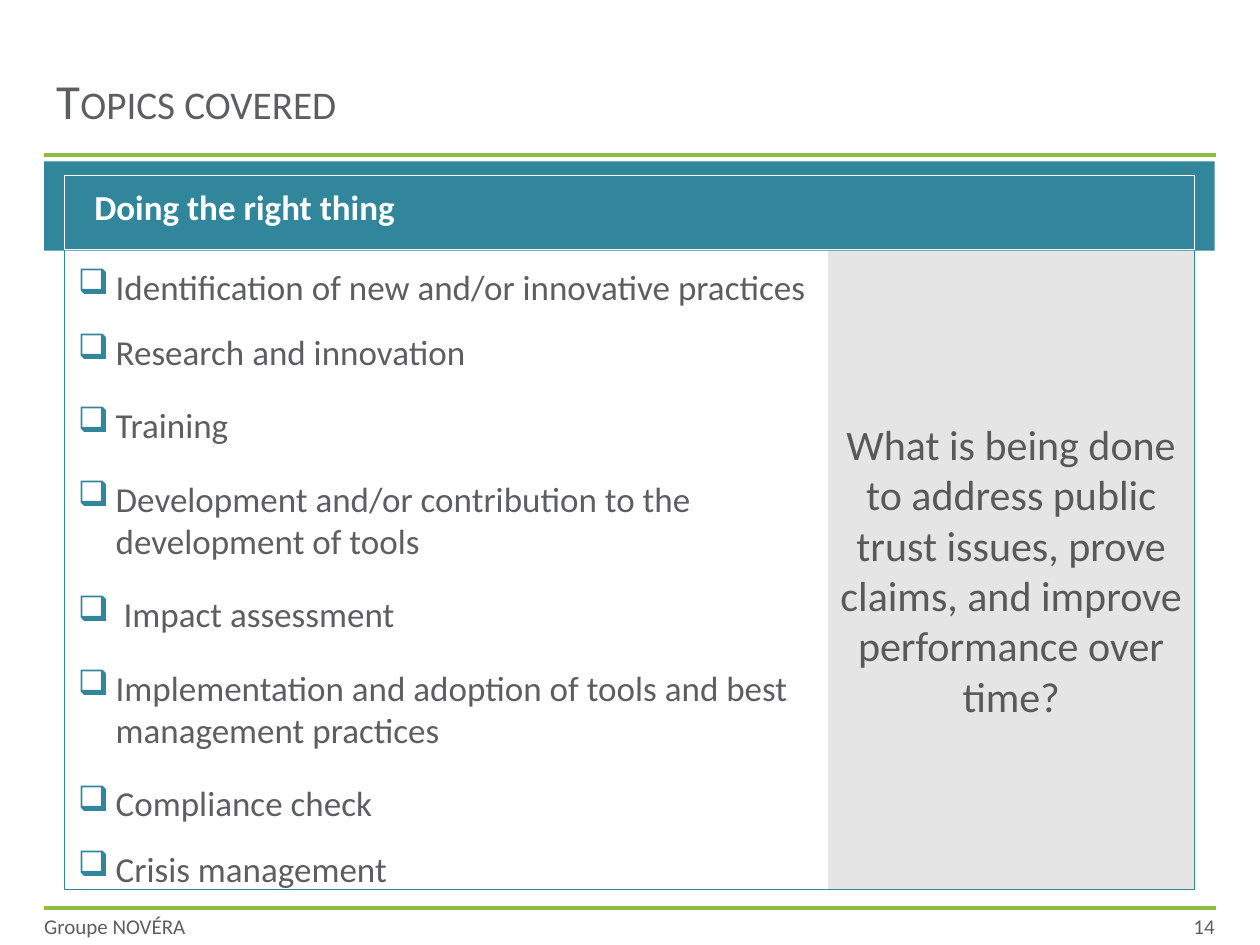
from lxml.etree import SubElement
from pptx import Presentation
from pptx.dml.color import RGBColor
from pptx.enum.shapes import MSO_CONNECTOR as Connector, MSO_SHAPE as Shape
from pptx.enum.text import MSO_ANCHOR as Anchor, PP_ALIGN as Align
from pptx.oxml.ns import qn
from pptx.util import Inches, Pt

GREEN, TEAL, WHITE = "8EBC3F", "31869B", "FFFFFF"
TEXT, DARK, GREY = "5C5E5F", "595959", "D9D9D9"
RULE_LEFT, RULE_RIGHT = 0.35, 9.65
FRAME_LEFT, FRAME_TOP, FRAME_WIDTH = 0.51, 1.39, 8.97
BODY_TOP, FRAME_BOTTOM, FOOTER_TOP = 1.98, 7.06, 7.21
INDENT = 0.3

# Topic and its line spacing
TOPICS = [
    ("Identification of new and/or innovative practices", 0.8),
    ("Research and innovation", 0.8),
    ("Training", 1.0),
    ("Development and/or contribution to the development of tools", 1.0),
    (" Impact assessment", 1.0),
    ("Implementation and adoption of tools and best management practices", 1.0),
    ("Compliance check", 1.0),
    ("Crisis management", 0.8),
]


def colour(value):
    return RGBColor.from_string(value)


def apply(target, values):
    for name, value in values.items():
        setattr(target, name, value)


class SlideBuilder:
    font = "Calibri"

    def __init__(self, page):
        self.page = page

    def rule(self, y):
        line = self.page.shapes.add_connector(
            Connector.STRAIGHT, Inches(RULE_LEFT), Inches(y), Inches(RULE_RIGHT), Inches(y))
        line.line.color.rgb = colour(GREEN)
        line.line.width = Pt(2.25)
        SubElement(line._element.spPr, qn("a:effectLst"))

    def rectangle(self, left, top, width, height, fill=None, line=None, opacity=100):
        box = self.page.shapes.add_shape(
            Shape.RECTANGLE, Inches(left), Inches(top), Inches(width), Inches(height))
        box.shadow.inherit = False
        if fill:
            box.fill.solid()
            box.fill.fore_color.rgb = colour(fill)
            if opacity < 100:
                solid = box._element.spPr.find(qn("a:solidFill"))
                SubElement(solid[0], qn("a:alpha"), val=str(opacity * 1000))
        else:
            box.fill.background()
        if line:
            box.line.color.rgb = colour(line)
            box.line.width = Pt(0.75)
        else:
            box.line.fill.background()
        return box

    def text_box(self, left, top, width, height):
        return self.page.shapes.add_textbox(
            Inches(left), Inches(top), Inches(width), Inches(height))

    def frame(self, box, anchor=Anchor.MIDDLE, margins=(0.1, 0.05, 0.1, 0.05)):
        sides = ("margin_left", "margin_top", "margin_right", "margin_bottom")
        apply(box.text_frame, {"word_wrap": True, "vertical_anchor": anchor,
                               **dict(zip(sides, map(Inches, margins)))})
        return box.text_frame

    def add_text(self, para, text, size, ink=TEXT, bold=False, align=Align.LEFT, **spacing):
        apply(para, {"alignment": align, **spacing})
        span = para.add_run()
        span.text = text
        apply(span.font, {"name": self.font, "size": Pt(size), "bold": bold})
        span.font.color.rgb = colour(ink)
        return span

    def indent(self, para, left, first=0.0):
        props = para._p.get_or_add_pPr()
        props.set("marL", str(Inches(left)))
        props.set("indent", str(Inches(first)))
        return props

    def checklist(self, frame, items):
        for number, (text, spacing) in enumerate(items):
            para = frame.add_paragraph() if number else frame.paragraphs[0]
            self.add_text(para, text, 20, line_spacing=spacing,
                          space_before=Pt(12), space_after=Pt(6))
            props = self.indent(para, INDENT, -INDENT)
            bullet = SubElement(props, qn("a:buClr"))
            SubElement(bullet, qn("a:srgbClr"), val=TEAL)
            SubElement(props, qn("a:buChar"), char="❑")


def main():
    deck = Presentation()
    deck.slide_width, deck.slide_height = Inches(10), Inches(7.5)
    slide = SlideBuilder(deck.slides.add_slide(deck.slide_layouts[6]))

    # Rules above and below the content
    for y in (1.23, FOOTER_TOP):
        slide.rule(y)

    # Question panel and outer frame
    panel = slide.rectangle(6.57, BODY_TOP, 2.91, FRAME_BOTTOM - BODY_TOP, GREY, WHITE, 68)
    slide.add_text(slide.frame(panel).paragraphs[0],
                   "What is being done to address public trust issues, prove claims, "
                   "and improve performance over time?", 24, DARK, align=Align.CENTER)
    slide.rectangle(FRAME_LEFT, FRAME_TOP, FRAME_WIDTH, FRAME_BOTTOM - FRAME_TOP, line=TEAL)

    # Footer
    for left, width, text, align in ((7.99, 1.65, "14", Align.RIGHT),
                                     (RULE_LEFT, 1.81, "Groupe NOVÉRA", Align.LEFT)):
        footer = slide.frame(slide.text_box(left, FOOTER_TOP, width, 0.28), margins=(0,) * 4)
        slide.add_text(footer.paragraphs[0], text, 12, align=align)

    # Title in small capitals
    title = slide.frame(slide.text_box(RULE_LEFT, 0.3, 9.29, 0.98))
    span = slide.add_text(title.paragraphs[0], "Topics covered", 28)
    span.font._element.set("cap", "small")

    # Topics
    topics = slide.frame(slide.text_box(0.52, 2.12, 6.06, 5.04), Anchor.TOP)
    slide.checklist(topics, TOPICS)

    # Header band with its inner outline
    band = slide.rectangle(RULE_LEFT, 1.28, 9.29, 0.71, TEAL)
    heading = slide.frame(band).paragraphs[0]
    slide.add_text(heading, "Doing the right thing", 20, WHITE, bold=True)
    slide.indent(heading, INDENT)
    slide.rectangle(FRAME_LEFT, FRAME_TOP, FRAME_WIDTH, BODY_TOP - FRAME_TOP, line=WHITE)

    deck.save("out.pptx")


if __name__ == "__main__":
    main()
